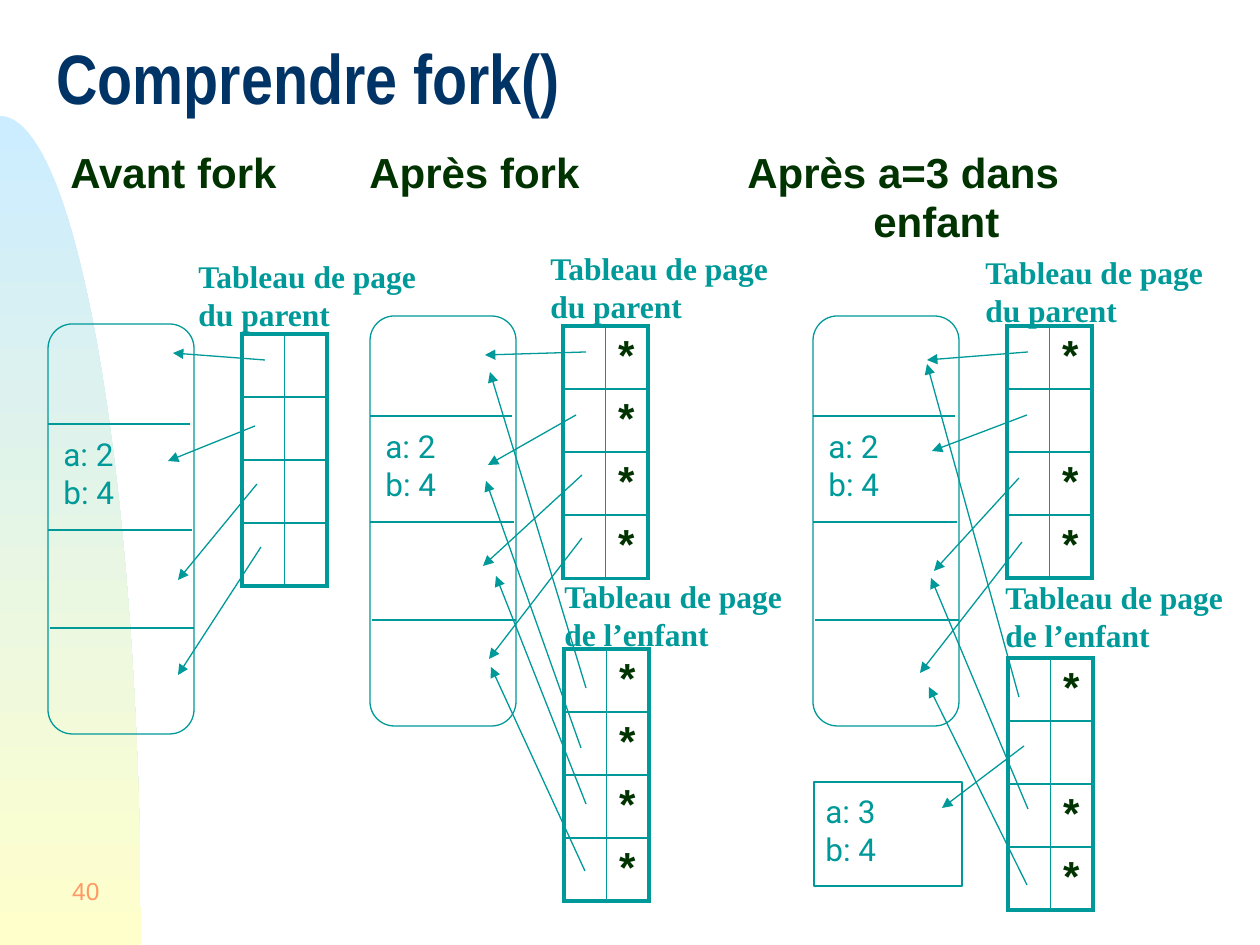
from lxml import etree
from pptx import Presentation
from pptx.dml.color import RGBColor
from pptx.enum.shapes import MSO_CONNECTOR, MSO_SHAPE
from pptx.enum.text import MSO_ANCHOR, MSO_AUTO_SIZE, PP_ALIGN
from pptx.oxml.ns import qn
from pptx.util import Pt

STRAIGHT = MSO_CONNECTOR.STRAIGHT
RECTANGLE, ROUNDED = MSO_SHAPE.RECTANGLE, MSO_SHAPE.ROUNDED_RECTANGLE
MIDDLE, TOP = MSO_ANCHOR.MIDDLE, MSO_ANCHOR.TOP
LEFT, RIGHT = PP_ALIGN.LEFT, PP_ALIGN.RIGHT
NO_AUTOFIT = MSO_AUTO_SIZE.NONE

PX = 914400 / 126
WIDTH, HEIGHT = 1260, 945

TEAL = RGBColor(0x00, 0x99, 0x99)
NAVY = RGBColor(0x00, 0x33, 0x66)
DARK_GREEN = RGBColor(0x00, 0x33, 0x00)
ORANGE = RGBColor(0xFF, 0x99, 0x66)
SKY = RGBColor(0xCC, 0xEC, 0xFF)
CREAM = RGBColor(0xFF, 0xFF, 0xCC)

# Content; positions in px
TITLE = "Comprendre fork()"
HEADINGS = ["Avant fork\tAprès fork\tAprès a=3 dans", "\tenfant"]
HEADING_STOPS = [(299, 677), (803,)]
PAGE_NUMBER = "40"
CURVE = [(0, 116), (78, 116), (141, 488), (141, 945)]

PANELS = [
    {
        "memory": (48, 324),
        "page_tables": [(242, 334, "    ")],
        "labels": [(186, 251, "du parent")],
        "arrows": [(265, 360, 173, 353), (255, 426, 168, 461),
                   (257, 484, 178, 580), (261, 547, 178, 675)],
    },
    {
        "memory": (370, 316),
        "page_tables": [(563, 326, "****"), (564, 649, "****")],
        "labels": [(538, 243, "du parent"), (552, 571, "de l’enfant")],
        "arrows": [(586, 352, 485, 355), (576, 415, 488, 465),
                   (582, 475, 483, 566), (582, 538, 489, 659),
                   (586, 688, 490, 372), (581, 748, 486, 481),
                   (586, 804, 496, 576), (585, 871, 491, 667)],
    },
    {
        "memory": (813, 316),
        "page_tables": [(1007, 326, "* **"), (1008, 658, "* **")],
        "labels": [(973, 247, "du parent"), (993, 572, "de l’enfant")],
        "arrows": [(1028, 352, 927, 360), (1027, 415, 932, 451),
                   (1019, 478, 934, 571), (1022, 542, 920, 673),
                   (1019, 697, 927, 364), (1024, 746, 942, 808),
                   (1028, 809, 931, 578), (1027, 885, 929, 687)],
    },
]
MEMORY_VALUES = ["a: 2", "b: 4"]
COPIED_PAGE = (814, 782, 148, 104)
COPIED_VALUES = ["a: 3", "b: 4"]

MEMORY_SIZE = (146, 410)
DIVIDERS = [(0, 142, 100), (0, 144, 206), (2, 146, 304)]
COLUMN, ROW = 42.5, 63


def emu(*lengths):
    return [round(length * PX) for length in lengths]


def style(paragraph, size, font, color, bold=False):
    for run in paragraph.runs:
        run.font.size = Pt(size)
        run.font.name = font
        run.font.color.rgb = color
        run.font.bold = bold


def add_text(box, lines, *look, wrap=True, anchor=TOP, align=LEFT):
    frame = slide.shapes.add_textbox(*emu(*box)).text_frame
    frame.word_wrap = wrap
    frame.vertical_anchor = anchor
    frame.text = "\n".join(lines)
    for paragraph in frame.paragraphs:
        paragraph.alignment = align
        style(paragraph, *look)
    return frame


def add_outline(kind, box):
    outline = slide.shapes.add_shape(kind, *emu(*box))
    outline.shadow.inherit = False
    outline.fill.background()
    outline.line.color.rgb = TEAL
    outline.line.width = Pt(0.75)


def add_line(ends, arrow=False):
    line = slide.shapes.add_connector(STRAIGHT, *emu(*ends))
    line.line.color.rgb = TEAL
    line.line.width = Pt(0.75)
    if arrow:
        etree.SubElement(line.line._get_or_add_ln(), qn("a:tailEnd"), type="triangle")
    etree.SubElement(line._element.spPr, qn("a:effectLst"))


def add_values(x, y, values):
    add_text((x, y, 78, 88), values, 18, "Roboto", TEAL, wrap=False)


def set_borders(cell, outer_sides):
    properties = cell._tc.get_or_add_tcPr()
    for index, side in enumerate("LRTB"):
        width = Pt(2.25 if side in outer_sides else 1)
        border = etree.Element(qn("a:ln" + side), w=str(width))
        fill = etree.SubElement(border, qn("a:solidFill"))
        etree.SubElement(fill, qn("a:srgbClr"), val=str(TEAL))
        properties.insert(index, border)


def add_page_table(x, y, marks):
    count = len(marks)
    table = slide.shapes.add_table(
        count, 2, *emu(x, y, 2 * COLUMN, count * ROW)).table
    table.first_row = table.horz_banding = False
    for row, mark in enumerate(marks):
        edge = "T" if row == 0 else "B" if row == count - 1 else ""
        for column, side in enumerate("LR"):
            cell = table.cell(row, column)
            cell.fill.background()
            set_borders(cell, edge + side)
        if mark == "*":
            cell.text = mark
            paragraph = cell.text_frame.paragraphs[0]
            paragraph.space_before = Pt(4.8)
            style(paragraph, 24, "Arial", DARK_GREEN, True)


presentation = Presentation()
presentation.slide_width, presentation.slide_height = emu(WIDTH, HEIGHT)
slide = presentation.slides.add_slide(presentation.slide_layouts[5])

# Title
title = slide.shapes.title
title.left, title.top, title.width, title.height = emu(44, 45, 1184, 84)
title_frame = title.text_frame
title_frame.text = TITLE
title_frame.auto_size = NO_AUTOFIT
title_frame.vertical_anchor = MIDDLE
title_line = title_frame.paragraphs[0]
title_line.alignment = LEFT
title_line.line_spacing = 0.7
style(title_line, 40, "Arial Narrow", NAVY, True)

# Curved side band, sampled along a cubic curve
STEPS = 48
curve_points = []
for step in range(STEPS + 1):
    t = step / STEPS
    weights = ((1 - t) ** 3, 3 * t * (1 - t) ** 2, 3 * t * t * (1 - t), t ** 3)
    curve_points.append(tuple(
        sum(w * point[axis] for w, point in zip(weights, CURVE)) for axis in (0, 1)))
builder = slide.shapes.build_freeform(*emu(*curve_points[0]))
builder.add_line_segments(
    [emu(*point) for point in curve_points[1:] + [(0, HEIGHT)]], close=True)
band = builder.convert_to_shape()
band.shadow.inherit = False
band.line.fill.background()
band.fill.gradient()
band.fill.gradient_angle = 270
for stop, color in zip(band.fill.gradient_stops, (SKY, CREAM)):
    stop.color.rgb = color

# Page number and headings
add_text((24, 859, 88, 63), [PAGE_NUMBER], 14, "Arial", ORANGE,
         wrap=False, anchor=MIDDLE, align=RIGHT)
headings = add_text((58, 150, 1143, 111), HEADINGS, 24, "Arial", DARK_GREEN, True)
for paragraph, stops in zip(headings.paragraphs, HEADING_STOPS):
    paragraph.line_spacing = 0.8
    paragraph.space_before = Pt(4.8)
    tabs = etree.SubElement(paragraph._p.get_or_add_pPr(), qn("a:tabLst"))
    for position in emu(*stops):
        etree.SubElement(tabs, qn("a:tab"), pos=str(position), algn="l")

# Panels: memory, page tables, labels and arrows
for panel in PANELS:
    x, y = panel["memory"]
    add_outline(ROUNDED, (x, y, *MEMORY_SIZE))
    for start, end, drop in DIVIDERS:
        add_line((x + start, y + drop, x + end, y + drop))
    add_values(x + 3, y + 105, MEMORY_VALUES)
    for page_table in panel["page_tables"]:
        add_page_table(*page_table)
    for label_x, label_y, owner in panel["labels"]:
        add_text((label_x, label_y, 267, 88), ["Tableau de page", owner],
                 18, "Times New Roman", TEAL, True)
    for arrow in panel["arrows"]:
        add_line(arrow, arrow=True)

# Page copied for the child
add_outline(RECTANGLE, COPIED_PAGE)
add_values(813, 786, COPIED_VALUES)

presentation.save("out.pptx")
